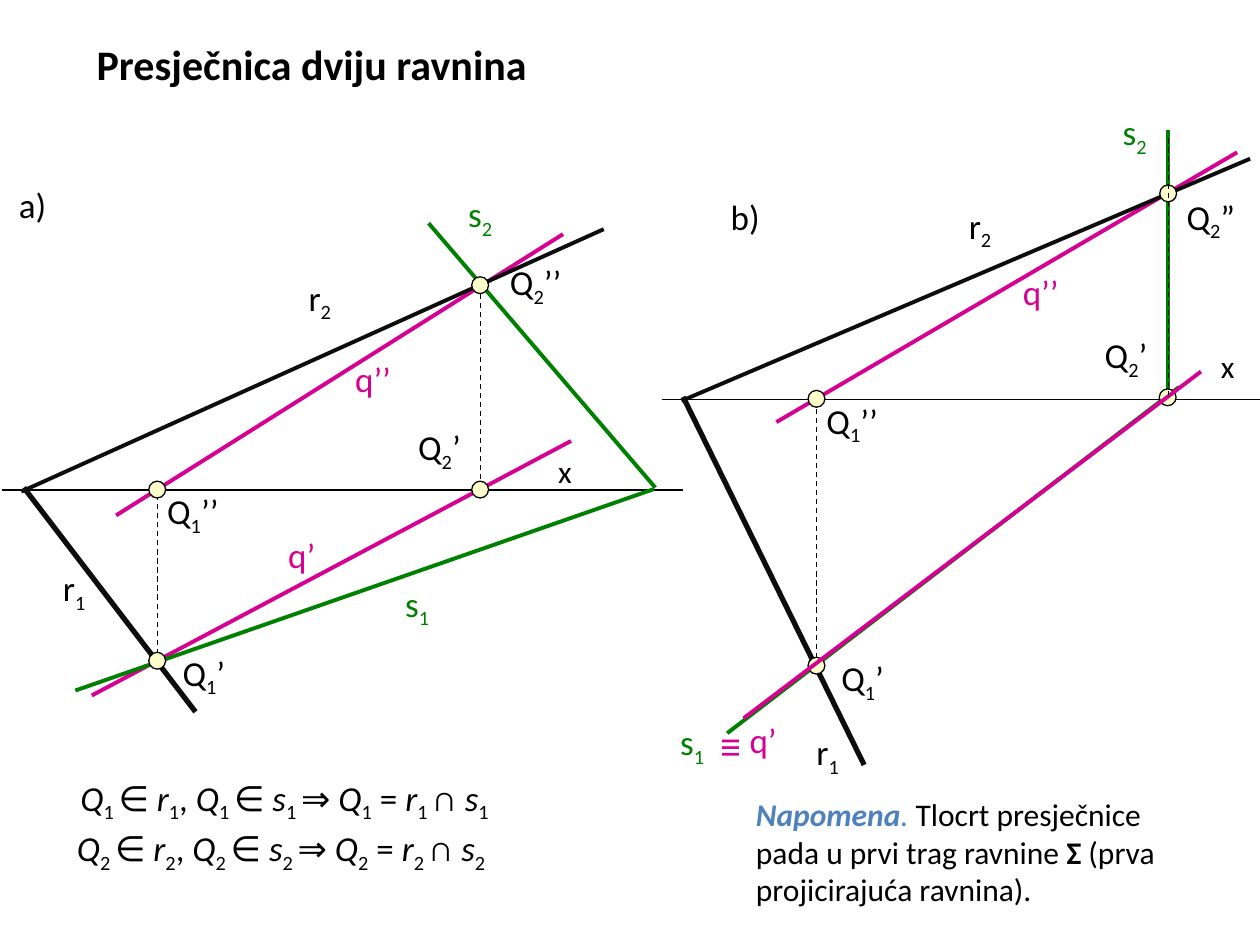
"""Intersection line of two planes, shown in two descriptive-geometry constructions."""
from lxml import etree
from pptx import Presentation
from pptx import util as u
from pptx.dml.color import RGBColor
from pptx.enum import dml, shapes, text
from pptx.oxml import ns

COLOURS = {"ink": "000000", "trace": "0D0D0D", "sigma": "008000",
           "meet": "D60093", "point": "FFFFCC", "note": "4F81BD"}


class Drawing:
    """Style and current slide, with one method for each kind of element."""

    font = "Calibri"
    label_height = 1.09
    point_size = 0.34

    def __init__(self, slide):
        self.slide = slide

    def colour(self, name):
        return RGBColor.from_string(COLOURS[name])

    def line(self, x1, y1, x2, y2, colour="ink", width=2.25, dashed=False):
        ends = [u.Cm(value) for value in (x1, y1, x2, y2)]
        stroke = self.slide.shapes.add_connector(shapes.MSO_CONNECTOR.STRAIGHT, *ends)
        stroke.line.color.rgb = self.colour(colour)
        stroke.line.width = u.Pt(width)
        if dashed:
            stroke.line.dash_style = dml.MSO_LINE.DASH
        etree.SubElement(stroke._element.spPr, ns.qn("a:effectLst"))

    def projector(self, x, y1, y2):
        self.line(x, y1, x, y2, width=0.75, dashed=True)

    def point(self, x, y):
        half, size = self.point_size / 2, u.Cm(self.point_size)
        dot = self.slide.shapes.add_shape(
            shapes.MSO_SHAPE.OVAL, u.Cm(x - half), u.Cm(y - half), size, size)
        dot.shadow.inherit = False
        dot.fill.solid()
        dot.fill.fore_color.rgb = self.colour("point")
        dot.line.color.rgb = self.colour("ink")
        dot.line.width = u.Pt(0.75)

    def text(self, parts, x, y, width, height, size, anchor=text.MSO_ANCHOR.TOP):
        box = self.slide.shapes.add_textbox(u.Cm(x), u.Cm(y), u.Cm(width), u.Cm(height))
        frame = box.text_frame
        frame.word_wrap = True
        frame.vertical_anchor = anchor
        for words, colour, bold, italic, lowered in parts:
            run = frame.paragraphs[0].add_run()
            run.text = words
            run.font.name = self.font
            run.font.size = u.Pt(size)
            run.font.bold = bold
            run.font.italic = italic
            run.font.color.rgb = self.colour(colour)
            if lowered:
                run._r.get_or_add_rPr().set("baseline", "-25000")

    def label(self, symbols, x, y, width, colour="ink", size=20, italic=False):
        parts = [(symbol, colour, False, italic and symbol.isalpha(), symbol[0].isdigit())
                 for symbol in symbols.split("|")]
        self.text(parts, x, y, width, self.label_height, size)


def draw_case(drawing, lines, projectors, points, labels):
    for line in lines:
        drawing.line(*line)
    for projector in projectors:
        drawing.projector(*projector)
    for point in points:
        drawing.point(*point)
    for label in labels:
        drawing.label(*label)


def main():
    deck = Presentation()
    deck.slide_width, deck.slide_height = u.Cm(25.4), u.Cm(19.05)
    drawing = Drawing(deck.slides.add_slide(deck.slide_layouts[6]))

    drawing.text([("Presječnica dviju ravnina", "ink", True, False, False)],
                 1.7, 0.43, 12.7, 1.7, 24, text.MSO_ANCHOR.MIDDLE)

    draw_case(
        drawing,
        lines=[
            (2.34, 10.39, 11.35, 4.72, "meet"),
            (11.51, 8.89, 1.85, 14.02, "meet"),
            (0.05, 9.88, 13.77, 9.88, "ink", 0.75),
            (12.17, 4.62, 0.43, 9.91, "trace"),
            (0.48, 9.83, 3.94, 14.35, "trace", 3),
            (8.64, 4.5, 13.21, 9.83, "sigma"),
            (13.18, 9.86, 1.52, 13.92, "sigma"),
        ],
        projectors=[(3.17, 13.18, 9.8), (9.68, 5.74, 9.73)],
        points=[(3.17, 13.32), (3.17, 9.87), (9.68, 9.87), (9.68, 5.75)],
        labels=[
            ("a)", 0.13, 3.58, 1.42),
            ("q’’", 6.91, 7.09, 1.8, "meet"),
            ("q’", 5.56, 10.64, 1.75, "meet"),
            ("r|1", 1.02, 11.3, 1.27),
            ("r|2", 5.97, 5.44, 1.55),
            ("s|1", 7.92, 11.61, 1.45, "sigma"),
            ("s|2", 9.19, 3.76, 2.18, "sigma"),
            ("Q|1|’", 3.43, 13, 1.73),
            ("Q|1|’’", 3.12, 9.75, 2.08),
            ("Q|2|’", 8.18, 8.46, 1.88),
            ("Q|2|’’", 10.03, 5.13, 2.29),
            ("x", 11, 8.99, 1.83, "ink", 18),
        ])

    draw_case(
        drawing,
        lines=[
            (15.65, 8.51, 24.94, 3.07, "meet"),
            (23.77, 7.8, 14.66, 14.78, "sigma"),
            (13.34, 8.05, 25.4, 8.05, "ink", 0.75),
            (25.2, 3.2, 13.74, 8.08, "trace"),
            (13.77, 8, 17.42, 15.42, "trace", 3),
            (23.55, 2.62, 23.55, 7.98, "sigma"),
        ],
        projectors=[(16.46, 13.26, 8)],
        points=[(16.46, 13.42), (16.46, 8.04), (23.54, 8.01), (23.55, 3.9)],
        labels=[
            ("b)", 14.48, 3.81, 1.45),
            ("q’’", 20.37, 5.33, 1.85, "meet"),
            ("r|1", 16.21, 14.61, 1.27),
            ("r|2", 19.28, 3.99, 1.55),
            ("s|1", 13.46, 14.4, 1.45, "sigma"),
            ("s|2", 22.38, 2.11, 2.18, "sigma"),
            ("≡", 14.27, 14.38, 1.02, "meet", 24),
            ("q’", 14.86, 14.35, 1.68, "meet"),
            ("Q|1|’", 16.71, 13.11, 1.73),
            ("Q|1|’’", 16.41, 7.92, 2.08),
            ("Q|2|’", 22.02, 6.6, 1.88),
            ("Q|2|”", 23.67, 3.81, 1.57),
            ("x", 24.36, 6.88, 1.04, "ink", 18),
        ])
    drawing.line(24.21, 7.49, 14.99, 14.48, "meet")
    drawing.projector(23.55, 2.79, 8.05)

    for n, x, y in ((1, 1.37, 15.52), (2, 1.3, 16.54)):
        drawing.label(f"Q|{n} |∈ |r|{n}|, |Q|{n} |∈ |s|{n} |⇒ |Q|{n}| = |r|{n} |∩ |s|{n}",
                      x, y, 9.8, italic=True)

    drawing.text([
        ("Napomena", "note", True, True, False),
        (".", "note", False, True, False),
        (" Tlocrt presječnice pada u prvi trag ravnine ", "ink", False, False, False),
        ("Σ", "ink", True, False, False),
        (" (prva projicirajuća ravnina).", "ink", False, False, False),
    ], 14.99, 15.9, 8.71, 2.54, 18)

    deck.save("out.pptx")


if __name__ == "__main__":
    main()
